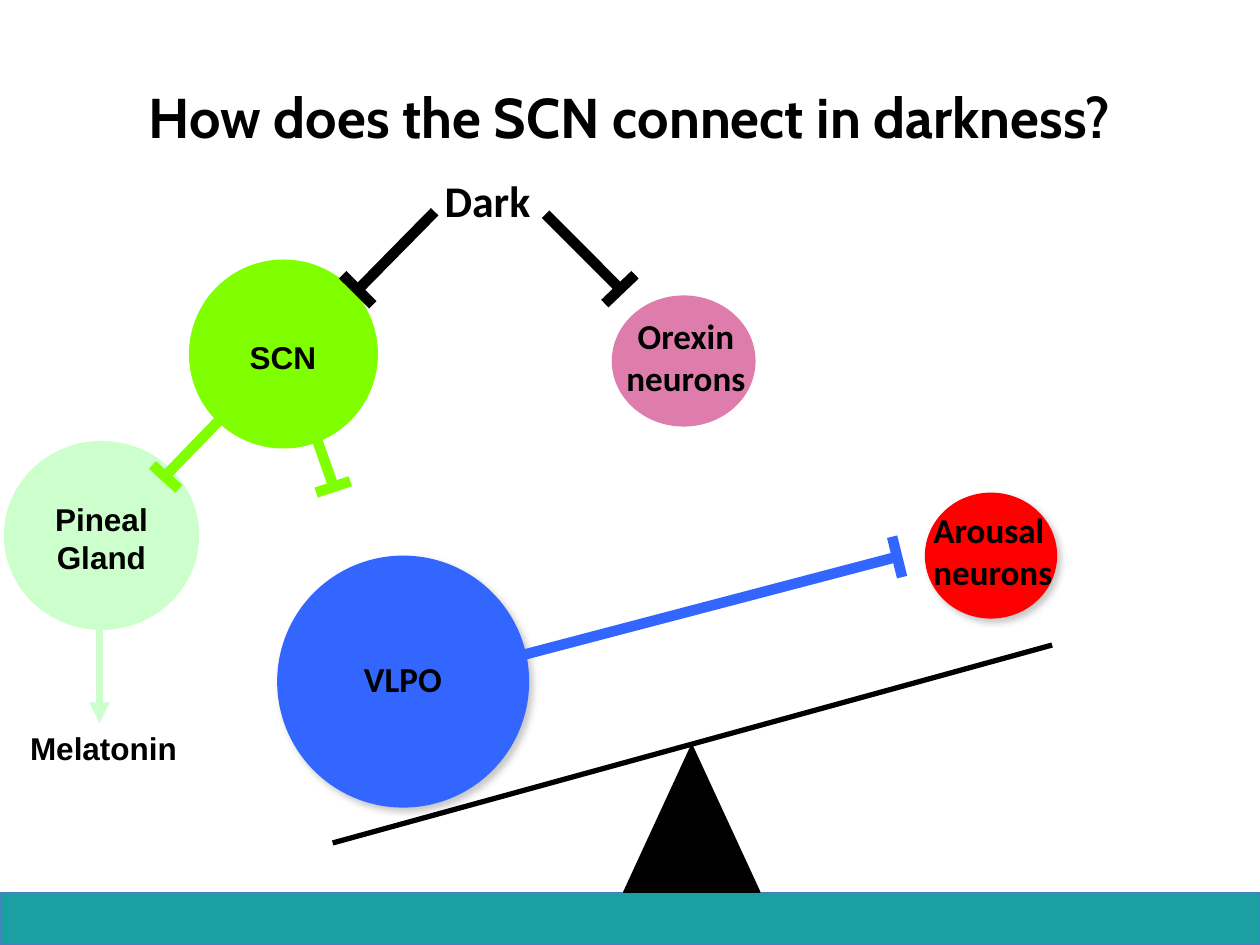
from lxml import etree
from pptx import Presentation
from pptx import util as u
from pptx.dml.color import RGBColor
from pptx.enum import shapes, text
from pptx.oxml import parse_xml
from pptx.oxml.ns import nsdecls, qn

Pt = u.Pt
SHAPE = shapes.MSO_SHAPE
BLACK, LIME, MINT, BLUE = "000000", "80FF00", "CCFFCC", "3366FF"
RED, PINK, TEAL, OUTLINE = "FF0000", "DE7CAC", "1C9FA3", "4B7EBC"
SOFT_SHADOW = ("808080", 43, 4, 3, 45)  # colour, opacity %, blur, distance, angle
FLOOR_SHADOW = (BLACK, 35, 3.1, 1.8, 90)

presentation = Presentation()
presentation.slide_width, presentation.slide_height = Pt(720), Pt(540)
slide = presentation.slides.add_slide(presentation.slide_layouts[5])


def write(frame, words, size=18, font="Arial", align=None, wrap=False):
    """Fill a text frame with bold black text, one paragraph per line."""
    frame.word_wrap = wrap
    frame.text = words
    for paragraph in frame.paragraphs:
        paragraph.alignment = align
        paragraph.font.size = Pt(size)
        paragraph.font.name = font
        paragraph.font.bold = True
        paragraph.font.color.rgb = RGBColor.from_string(BLACK)


# Title
title = slide.shapes.title
title.left, title.top, title.width, title.height = Pt(0), Pt(21.6), Pt(720), Pt(90)
title.text_frame.vertical_anchor = text.MSO_ANCHOR.MIDDLE
write(title.text_frame, "How does the SCN connect in darkness?", size=32,
      font="Cabin", align=text.PP_ALIGN.CENTER, wrap=True)

# Floor, nuclei and pivot: kind, left, top, width, height, fill, outline, shadow
solids = [
    (SHAPE.RECTANGLE, 0, 510, 720, 30, TEAL, OUTLINE, FLOOR_SHADOW),
    (SHAPE.OVAL, 2.2, 252, 111.6, 108, MINT, None, None),
    (SHAPE.OVAL, 108, 148.3, 108, 108, LIME, None, None),
    (SHAPE.OVAL, 158.4, 317.5, 144, 144, BLUE, None, SOFT_SHADOW),
    (SHAPE.OVAL, 528.5, 281.5, 75.6, 72, RED, None, SOFT_SHADOW),
    (SHAPE.OVAL, 350, 169.2, 81.4, 74.2, PINK, PINK, None),
    (SHAPE.ISOSCELES_TRIANGLE, 356.4, 425.5, 77.8, 84.3, BLACK, BLACK, None),
]
for kind, left, top, width, height, fill, outline, shadow in solids:
    shape = slide.shapes.add_shape(kind, Pt(left), Pt(top), Pt(width), Pt(height))
    shape.fill.solid()
    shape.fill.fore_color.rgb = RGBColor.from_string(fill)
    if outline:
        shape.line.color.rgb = RGBColor.from_string(outline)
        shape.line.width = Pt(0.75)
    else:
        shape.line.fill.background()
    shape.shadow.inherit = False
    if shadow:
        colour, opacity, blur, distance, angle = shadow
        effects = shape._element.spPr.find(qn("a:effectLst"))
        effects.append(parse_xml(
            f'<a:outerShdw {nsdecls("a")} blurRad="{Pt(blur)}" dist="{Pt(distance)}" '
            f'dir="{angle * 60000}" rotWithShape="0"><a:srgbClr val="{colour}">'
            f'<a:alpha val="{opacity * 1000}"/></a:srgbClr></a:outerShdw>'))


def draw_line(start, end, colour, width=6):
    """Draw a straight line without a shadow."""
    line = slide.shapes.add_connector(shapes.MSO_CONNECTOR.STRAIGHT,
                                      *(Pt(value) for value in start + end))
    line.line.color.rgb = RGBColor.from_string(colour)
    line.line.width = Pt(width)
    etree.SubElement(line._element.spPr, qn("a:effectLst"))
    return line


# Seesaw beam
draw_line((190.1, 481.7), (601.2, 368.6), BLACK, 3)

# Pineal gland releases melatonin
release = draw_line((56.9, 342), (56.9, 413.3), MINT, 4)
etree.SubElement(release.line._get_or_add_ln(), qn("a:tailEnd"), type="triangle")

# Inhibition: a stem that ends in a crossbar
inhibitions = [
    ((164.9, 205.2), (190.8, 278.6), (180.7, 281.5), (200.2, 275), LIME),
    ((181.4, 182.2), (94.3, 272.2), (87.1, 265.7), (102.2, 279.4), LIME),
    ((293, 375.8), (512.6, 318.2), (509.8, 306.7), (515.5, 329.8), BLUE),
    ((311.8, 122.4), (354.2, 164.9), (362.9, 157), (345.6, 173.5), BLACK),
    ((248.4, 121), (204.5, 165.6), (213.1, 174.2), (195.8, 157), BLACK),
]
for stem_start, stem_end, bar_start, bar_end, colour in inhibitions:
    draw_line(stem_start, stem_end, colour)
    draw_line(bar_start, bar_end, colour)

# Labels: words, left, top, width, height, format
calibri = {"font": "Calibri", "size": 20}
centred = {"align": text.PP_ALIGN.CENTER}
labels = [
    ("VLPO", 200.9, 372.2, 59.8, 31.5, calibri),
    ("Arousal\nneurons", 526.3, 287.3, 84.2, 55.7, calibri),
    ("Orexin neurons", 349.9, 176.4, 84.2, 55.7, {**calibri, **centred, "wrap": True}),
    ("Melatonin", 10.1, 413.3, 99.4, 29.1, {}),
    ("Dark", 247, 95.8, 64.1, 37.4, {"font": "Calibri", "size": 25}),
    ("SCN", 135.4, 189.4, 52.6, 29.1, centred),
    ("Pineal Gland", 18, 282.2, 79.9, 51, {**centred, "wrap": True}),
]
for words, left, top, width, height, style in labels:
    box = slide.shapes.add_textbox(Pt(left), Pt(top), Pt(width), Pt(height))
    box.text_frame.auto_size = text.MSO_AUTO_SIZE.SHAPE_TO_FIT_TEXT
    write(box.text_frame, words, **style)

presentation.save("out.pptx")
